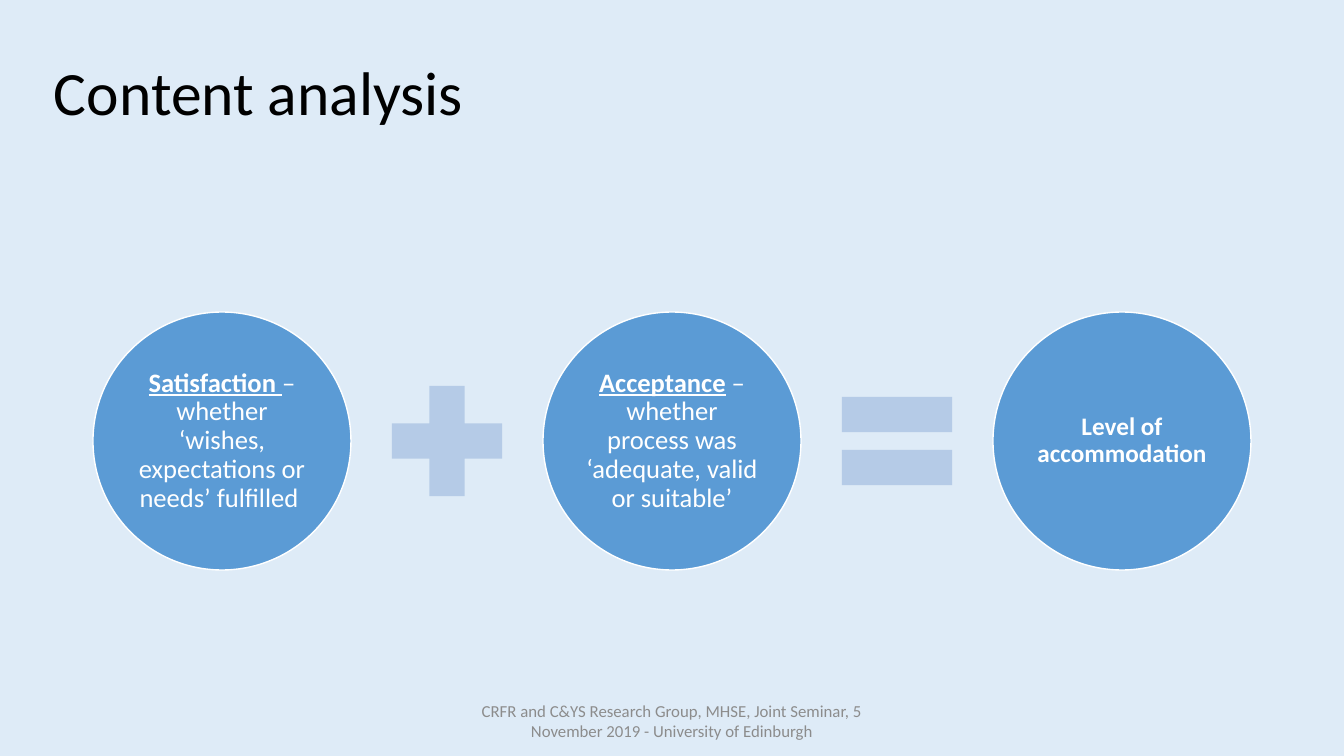
from pptx import Presentation
from pptx.dml.color import RGBColor
from pptx.enum.shapes import MSO_SHAPE as SHAPE
from pptx.enum.text import MSO_ANCHOR as ANCHOR, PP_ALIGN as ALIGN
from pptx.util import Pt

PX = 9144000 / 1008  # EMU per px
WHITE, BLUE, PALE_BLUE = "FFFFFF", "5B9BD5", "B5CBE7"


def color(fmt, value):
    """Give a fill or font a hex colour."""
    if hasattr(fmt, "solid"):
        fmt.solid()
        fmt = fmt.fore_color
    else:
        fmt = fmt.color
    fmt.rgb = RGBColor.from_string(value)


def write(sp, runs, size, ink, align=ALIGN.CENTER, spacing=1.0, inset=None):
    """Fill a shape with one paragraph of (text, bold, underline) runs."""
    tf = sp.text_frame
    tf.word_wrap = True
    tf.vertical_anchor = ANCHOR.MIDDLE
    if inset is not None:
        tf.margin_left = tf.margin_right = tf.margin_top = tf.margin_bottom = round(inset * PX)
    p = tf.paragraphs[0]
    p.alignment, p.line_spacing = align, spacing
    for text, bold, underline in runs:
        r = p.add_run()
        r.text = text
        r.font.name, r.font.size = "Calibri", Pt(size)
        r.font.bold, r.font.underline = bold, underline
        color(r.font, ink)


prs = Presentation()
prs.slide_width, prs.slide_height = round(1344 * PX), round(756 * PX)
s = prs.slides.add_slide(prs.slide_layouts[6])
color(s.background.fill, "DEEBF7")

title = s.shapes.add_textbox(*[round(v * PX) for v in (44, 35, 1220, 122)])
write(title, [("Content analysis", False, False)], 44, "000000", align=ALIGN.LEFT, spacing=0.9)

circles = [
    (19, [("Satisfaction", True, True), (" ", False, True),
          ("– whether ‘wishes, expectations or needs’ fulfilled ", False, False)]),
    (19, [("Acceptance", True, True),
          (" – whether process was ‘adequate, valid or suitable’", False, False)]),
    (18, [("Level of accommodation", True, False)]),
]
operators = [SHAPE.MATH_PLUS, SHAPE.MATH_EQUAL]
LEFT, MIDDLE, STEP, DIAMETER, OPERATOR = 93, 441, 450, 258, 150

for i, (size, runs) in enumerate(circles):
    x = LEFT + i * STEP
    box = (x, MIDDLE - DIAMETER // 2, DIAMETER, DIAMETER)
    sp = s.shapes.add_shape(SHAPE.OVAL, *[round(v * PX) for v in box])
    sp.shadow.inherit = False
    color(sp.fill, BLUE)
    color(sp.line.fill, WHITE)
    sp.line.width = Pt(1)
    write(sp, runs, size, WHITE, spacing=0.9, inset=3)

    if i < len(operators):
        gap_middle = x + (DIAMETER + STEP) // 2
        box = (gap_middle - OPERATOR // 2, MIDDLE - OPERATOR // 2, OPERATOR, OPERATOR)
        sp = s.shapes.add_shape(operators[i], *[round(v * PX) for v in box])
        sp.shadow.inherit = False
        color(sp.fill, PALE_BLUE)
        sp.line.fill.background()

footer = s.shapes.add_textbox(*[round(v * PX) for v in (445, 701, 454, 40)])
write(footer, [("CRFR and C&YS Research Group, MHSE, Joint Seminar, 5 November 2019"
                " - University of Edinburgh", False, False)], 12, "8C8C8C")

prs.save("out.pptx")
